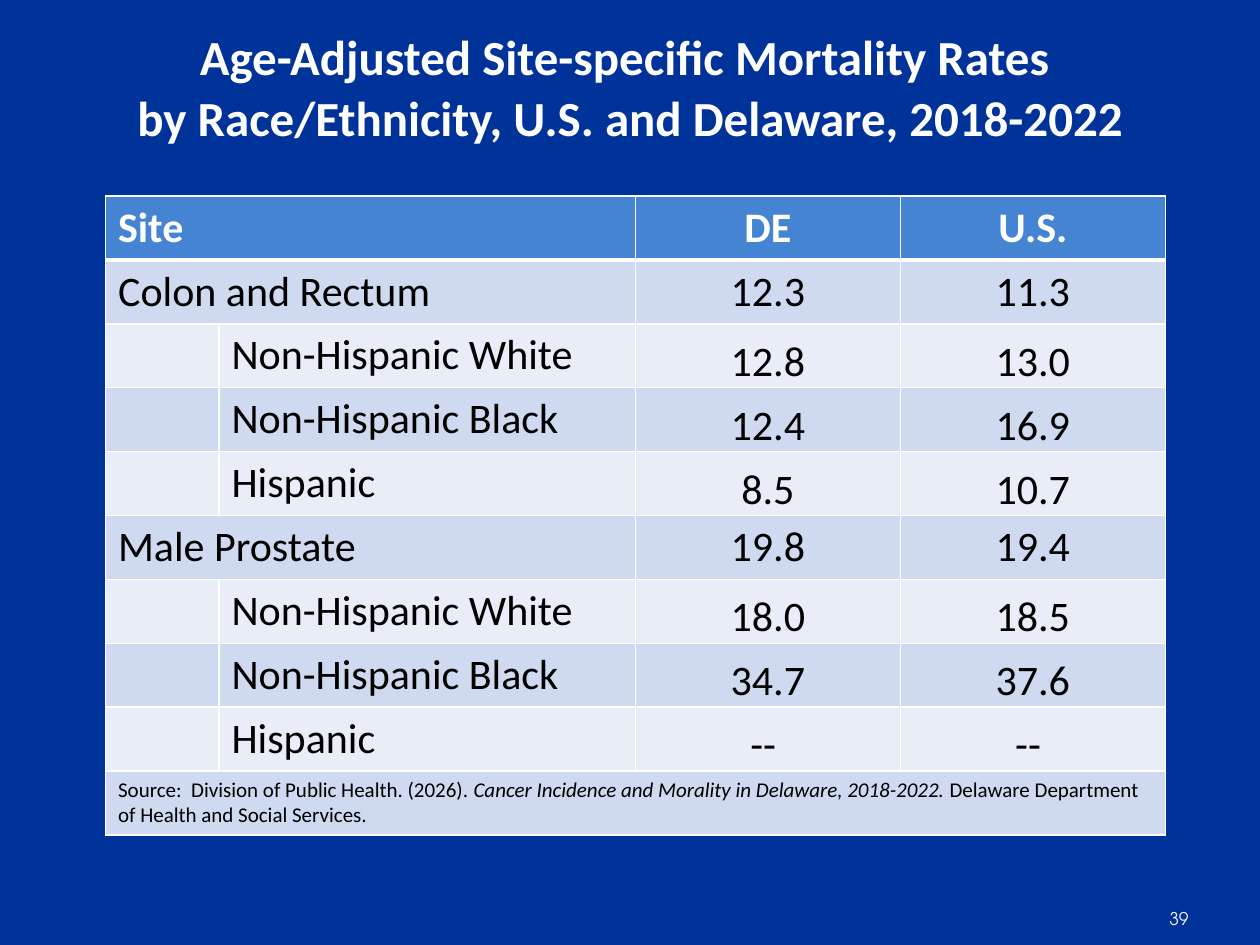
import pptx
import pptx.util
import pptx.dml.color
import pptx.enum.text
import pptx.oxml
import pptx.oxml.ns

Pt = pptx.util.Pt
ALIGN = pptx.enum.text.PP_ALIGN
ANCHOR = pptx.enum.text.MSO_ANCHOR

# Content
TITLE = ("Age-Adjusted Site-specific Mortality Rates \v"
         "by Race/Ethnicity, U.S. and Delaware, 2018-2022")
NUMBER = "39"
HEADER = ("Site", "DE", "U.S.")
SITES = [
    ("Colon and Rectum", "12.3", "11.3", [
        ("Non-Hispanic White", "12.8", "13.0"),
        ("Non-Hispanic Black", "12.4", "16.9"),
        ("Hispanic", "8.5", "10.7")]),
    ("Male Prostate", "19.8", "19.4", [
        ("Non-Hispanic White", "18.0", "18.5"),
        ("Non-Hispanic Black", "34.7", "37.6"),
        ("Hispanic", "-- ", "-- ")]),
]
SOURCE = [
    ("Source:  Division of Public Health. (2026).", False),
    (" Cancer Incidence and Morality in Delaware, 2018-2022. ", True),
    ("Delaware Department of Health and Social Services.", False),
]

# Format
BACKGROUND, HEAD_FILL, BANDS = "003399", "4584D3", ("CFD9EF", "E9EDF7")
LEFT, TOP, ROW_HEIGHT = 60.3, 112, 36.5
COLUMNS = (64.8, 238, 151.4, 151.4)
TITLE_FONT = {"name": "Calibri", "size": Pt(28), "bold": True, "color": "FFFFFF"}
HEAD_FONT = {**TITLE_FONT, "size": Pt(24)}
BODY_FONT = {**HEAD_FONT, "bold": False, "color": "000000"}
SOURCE_FONT = {**BODY_FONT, "size": Pt(12)}
NUMBER_FONT = {"name": "TeX Gyre Adventor", "size": Pt(10), "color": "F2F2F2"}


def rgb(value):
    return pptx.dml.color.RGBColor.from_string(value)


def set_font(font, formats):
    for key, value in formats.items():
        if key == "color":
            font.color.rgb = rgb(value)
        else:
            setattr(font, key, value)


def set_borders(cell, **widths):
    tcPr = cell._tc.get_or_add_tcPr()
    for i, side in enumerate("LRTB"):
        tcPr.insert(i, pptx.oxml.parse_xml(
            f'<a:ln{side} {pptx.oxml.ns.nsdecls("a")} w="{int(Pt(widths.get(side, 1)))}">'
            '<a:solidFill><a:srgbClr val="FFFFFF"/></a:solidFill>'
            f'</a:ln{side}>'))


def write(cell, text, formats, align=ALIGN.LEFT):
    p = cell.text_frame.paragraphs[0]
    p.alignment = align
    r = p.add_run()
    r.text = text
    set_font(r.font, formats)
    return r


prs = pptx.Presentation()
prs.slide_width, prs.slide_height = Pt(720), Pt(540)
s = prs.slides.add_slide(prs.slide_layouts[5])
s.background.fill.solid()
s.background.fill.fore_color.rgb = rgb(BACKGROUND)

# Title
title = s.shapes.title
title.left, title.top, title.width, title.height = Pt(0), Pt(0.7), Pt(720), Pt(95.8)
tf = title.text_frame
tf.text = TITLE
tf.auto_size = pptx.enum.text.MSO_AUTO_SIZE.NONE
tf.vertical_anchor = ANCHOR.MIDDLE
p = tf.paragraphs[0]
p.alignment, p.line_spacing = ALIGN.CENTER, Pt(35)
for r in p.runs:
    set_font(r.font, TITLE_FONT)

# Table rows as (first column of the label, texts)
rows = [(0, HEADER)]
for site, de, us, groups in SITES:
    rows.append((0, (site, de, us)))
    rows += [(1, group) for group in groups]
count = len(rows) + 1

table = s.shapes.add_table(count, len(COLUMNS), Pt(LEFT), Pt(TOP),
                           Pt(sum(COLUMNS)), Pt(count * ROW_HEIGHT)).table
for column, width in zip(table.columns, COLUMNS):
    column.width = Pt(width)

# Fills and borders
for i, row in enumerate(table.rows):
    row.height = Pt(ROW_HEIGHT)
    for cell in row.cells:
        cell.fill.solid()
        cell.fill.fore_color.rgb = rgb(BANDS[(i - 1) % 2] if i else HEAD_FILL)
        set_borders(cell, T=3 if i == 1 else 1, B=3 if i == 0 else 1)

# Labels and rates
for i, (start, (label, *rates)) in enumerate(rows):
    formats = BODY_FONT if i else HEAD_FONT
    if start == 0:
        table.cell(i, 0).merge(table.cell(i, 1))
    write(table.cell(i, start), label, formats)
    for j, rate in enumerate(rates, 2):
        cell = table.cell(i, j)
        write(cell, rate, formats, ALIGN.CENTER)
        if start == 1:
            cell.vertical_anchor = ANCHOR.BOTTOM
            cell.margin_left = cell.margin_right = cell.margin_top = Pt(0.7)
            cell.margin_bottom = Pt(0)

# Source row
cell = table.cell(count - 1, 0)
cell.merge(table.cell(count - 1, len(COLUMNS) - 1))
for text, italic in SOURCE:
    write(cell, text, {**SOURCE_FONT, "italic": italic})

# Slide number
box = s.shapes.add_textbox(Pt(666), Pt(510.5), Pt(44), Pt(28.8))
tf = box.text_frame
tf.word_wrap = True
tf.vertical_anchor = ANCHOR.MIDDLE
tf.margin_left, tf.margin_right = Pt(2.2), Pt(3.6)
write(box, NUMBER, NUMBER_FONT)

prs.save("out.pptx")
